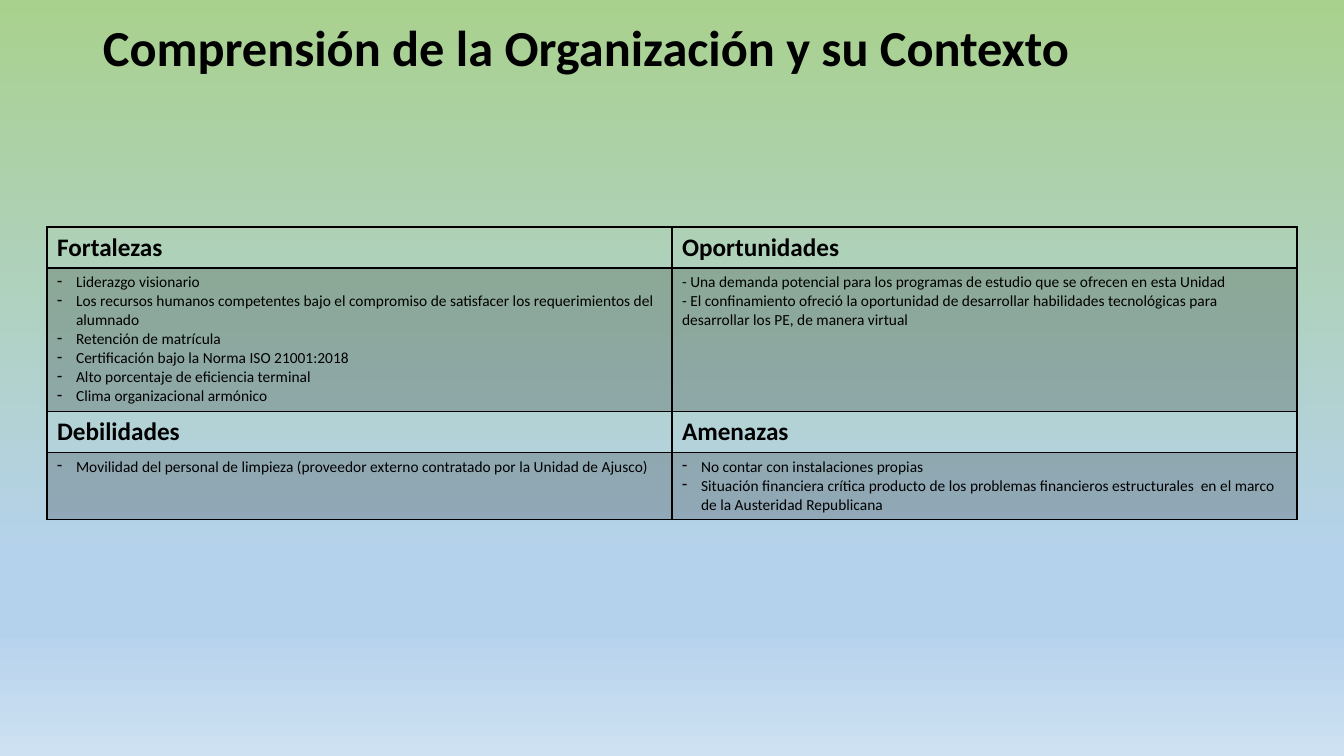
import pptx
import pptx.util
import pptx.dml.color
import pptx.enum.text
import pptx.oxml.ns
from lxml import etree

TITLE = "Comprensión de la Organización y su Contexto"
# Each quadrant: heading, items, whether the items hang from a dash bullet
QUADRANTS = [
    [
        ("Fortalezas", [
            "Liderazgo visionario",
            "Los recursos humanos competentes bajo el compromiso de satisfacer los requerimientos del alumnado",
            "Retención de matrícula",
            "Certificación bajo la Norma ISO 21001:2018",
            "Alto porcentaje de eficiencia terminal",
            "Clima organizacional armónico",
        ], True),
        ("Oportunidades", [
            "- Una demanda potencial para los programas de estudio que se ofrecen en esta Unidad",
            "- El confinamiento ofreció la oportunidad de desarrollar habilidades tecnológicas para "
            "desarrollar los PE, de manera virtual",
        ], False),
    ],
    [
        ("Debilidades", [
            "Movilidad del personal de limpieza (proveedor externo contratado por la Unidad de Ajusco)",
        ], True),
        ("Amenazas", [
            "No contar con instalaciones propias",
            "Situación financiera crítica producto de los problemas financieros estructurales  en el marco "
            "de la Austeridad Republicana",
        ], True),
    ],
]
COLORS = {"ink": "000000", "green": "A9D18E", "blue": "B5D2EC", "pale": "CEE1F2"}
BACKGROUND = [(0, "green"), (74, "blue"), (83, "blue"), (100, "pale")]
FONT = "Calibri"
SLIDE = (1344, 756)
TITLE_BOX = (93, 0, 1159, 101)
TABLE_LEFT, TABLE_TOP = 47, 227
COLUMN_WIDTH = 625
ROW_HEIGHTS = [41, 143, 41, 67]
INDENT = 19
SHADE_OPACITY = 20
EMU_PER_PX = 914400 / 100.8


def px(length):
    return pptx.util.Emu(round(length * EMU_PER_PX))


def add_node(parent, tag, **attributes):
    node = etree.SubElement(parent, pptx.oxml.ns.qn(tag))
    for name, value in attributes.items():
        node.set(name, str(value))
    return node


def paint_background(page):
    fill = page.background.fill
    fill.gradient()
    fill.gradient_angle = 270
    stops = page.element.find(".//" + pptx.oxml.ns.qn("a:gsLst"))
    for stop in list(stops):
        stops.remove(stop)
    for percent, color in BACKGROUND:
        stop = add_node(stops, "a:gs", pos=percent * 1000)
        add_node(stop, "a:srgbClr", val=COLORS[color])


def write(para, text, size, bold):
    span = para.add_run()
    span.text = text
    span.font.name = FONT
    span.font.size = pptx.util.Pt(size)
    span.font.bold = bold
    span.font.color.rgb = pptx.dml.color.RGBColor.from_string(COLORS["ink"])


def write_items(frame, items, dashed):
    for index, item in enumerate(items):
        para = frame.add_paragraph() if index else frame.paragraphs[0]
        if dashed:
            settings = para._p.get_or_add_pPr()
            settings.set("marL", str(px(INDENT)))
            settings.set("indent", str(-px(INDENT)))
            add_node(settings, "a:buFontTx")
            add_node(settings, "a:buChar", char="-")
        write(para, item, 11, False)


def shade(cell):
    cell.fill.solid()
    cell.fill.fore_color.rgb = pptx.dml.color.RGBColor.from_string(COLORS["ink"])
    color = cell._tc.tcPr.find(".//" + pptx.oxml.ns.qn("a:srgbClr"))
    add_node(color, "a:alpha", val=SHADE_OPACITY * 1000)


def draw_borders(cell, top, bottom):
    """Outline a cell in ink; top and bottom are line widths in points."""
    settings = cell._tc.get_or_add_tcPr()
    widths = [("L", 1), ("R", 1), ("T", top), ("B", bottom)]
    for position, (side, width) in enumerate(widths):
        line = add_node(settings, "a:ln" + side, w=pptx.util.Pt(width))
        add_node(add_node(line, "a:solidFill"), "a:srgbClr", val=COLORS["ink"])
        settings.insert(position, line)


def add_title(page):
    box = page.shapes.add_textbox(*map(px, TITLE_BOX))
    frame = box.text_frame
    frame.word_wrap = True
    frame.vertical_anchor = pptx.enum.text.MSO_ANCHOR.MIDDLE
    frame.paragraphs[0].line_spacing = 0.9
    write(frame.paragraphs[0], TITLE, 36, True)


def add_swot_table(page):
    columns = len(QUADRANTS[0])
    table = page.shapes.add_table(
        len(ROW_HEIGHTS), columns, px(TABLE_LEFT), px(TABLE_TOP),
        px(COLUMN_WIDTH * columns), px(sum(ROW_HEIGHTS))).table
    table.first_row = table.horz_banding = False
    for column in table.columns:
        column.width = px(COLUMN_WIDTH)
    for row, height in zip(table.rows, ROW_HEIGHTS):
        row.height = px(height)
    for band, quadrants in enumerate(QUADRANTS):
        for column, (heading, items, dashed) in enumerate(quadrants):
            head = table.cell(2 * band, column)
            body = table.cell(2 * band + 1, column)
            write(head.text_frame.paragraphs[0], heading, 18, True)
            write_items(body.text_frame, items, dashed)
            head.fill.background()
            shade(body)
            divider = 1 if band else 2
            draw_borders(head, 1, divider)
            draw_borders(body, divider, 1)


def main():
    deck = pptx.Presentation()
    deck.slide_width, deck.slide_height = map(px, SLIDE)
    page = deck.slides.add_slide(deck.slide_layouts[6])
    paint_background(page)
    add_swot_table(page)
    add_title(page)
    deck.save("out.pptx")


if __name__ == "__main__":
    main()
